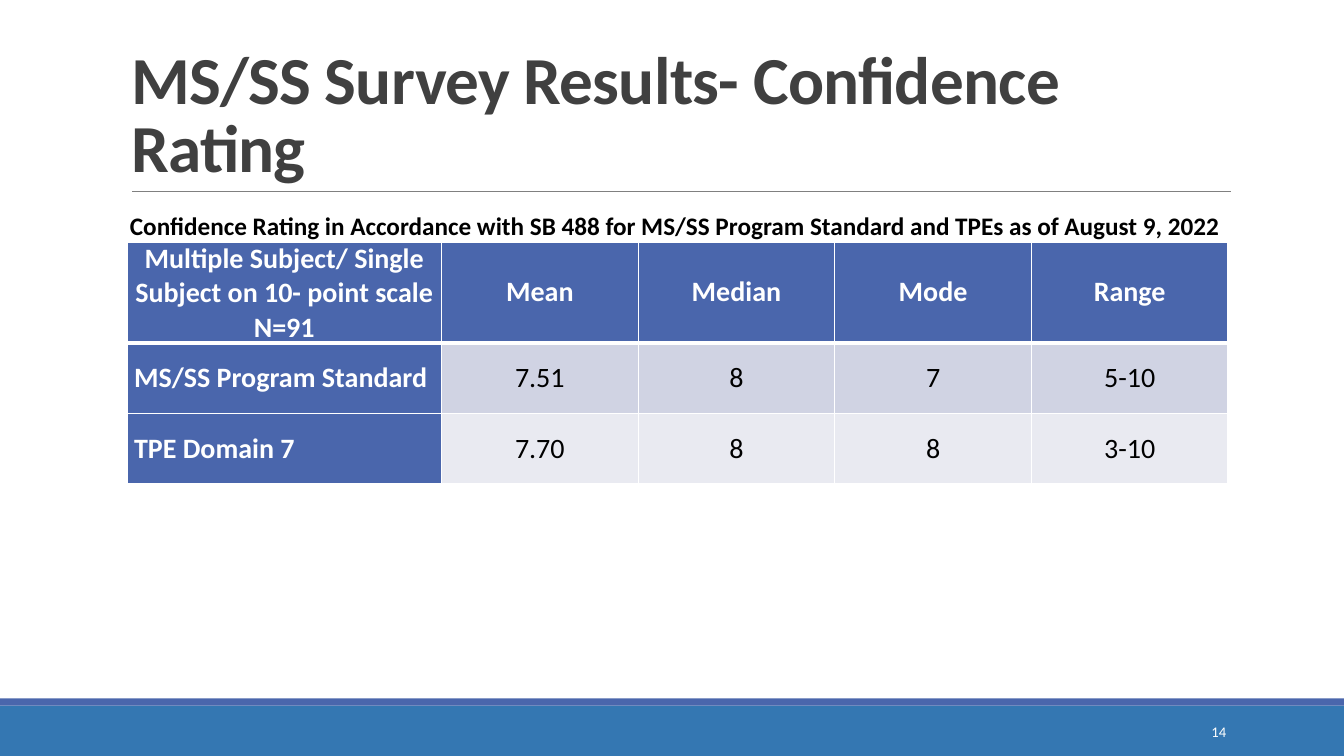
from dataclasses import dataclass

from lxml.etree import SubElement as Sub
from pptx import Presentation
from pptx.dml.color import RGBColor as Rgb
from pptx.enum.shapes import MSO_CONNECTOR as Link, MSO_SHAPE as Kind
from pptx.enum.text import MSO_ANCHOR as Anchor, MSO_AUTO_SIZE as Fit, PP_ALIGN as Align
from pptx.oxml.ns import qn
from pptx.slide import Slide
from pptx.table import _Cell as Cell
from pptx.text.text import TextFrame as Frame
from pptx.util import Inches, Pt

BLUE = Rgb(0x4A, 0x66, 0xAC)
TEAL = Rgb(0x34, 0x77, 0xB2)
WHITE = Rgb(0xFF, 0xFF, 0xFF)
BLACK = Rgb(0, 0, 0)
DARK = Rgb(0x40, 0x40, 0x40)
GRAY = Rgb(0x80, 0x80, 0x80)
BAND = Rgb(0xD0, 0xD3, 0xE3)
PALE = Rgb(0xE9, 0xEA, 0xF1)


@dataclass
class Bar:
    top: float
    high: float
    color: Rgb


@dataclass
class Row:
    high: float
    fill: Rgb
    cells: list[str]


BARS = [Bar(7, 0.5, TEAL), Bar(6.93, 0.07, BLUE)]
COLS = [3.12] + [1.95] * 4
ROWS = [
    Row(0.77, BLUE, ["Multiple Subject/ Single Subject on 10- point scale\nN=91",
                     "Mean", "Median", "Mode", "Range"]),
    Row(0.7, BAND, ["MS/SS Program Standard", "7.51", "8", "7", "5-10"]),
    Row(0.7, PALE, ["TPE Domain 7", "7.70", "8", "8", "3-10"]),
]


def write(frame: Frame, text: str, *, size: float, color: Rgb = BLACK,
          bold: bool = False, align: Align = Align.LEFT,
          anchor: Anchor = Anchor.TOP, space: float = 1, track: int = 0) -> None:
    frame.text = text
    frame.word_wrap = True
    frame.vertical_anchor = anchor
    for para in frame.paragraphs:
        para.alignment = align
        para.line_spacing = space
        for run in para.runs:
            font = run.font
            font.name, font.size, font.bold = "Calibri", Pt(size), bold
            font.color.rgb = color
            if track:
                font._element.set("spc", str(track))


def draw_bar(slide: Slide, bar: Bar) -> None:
    shape = slide.shapes.add_shape(
        Kind.RECTANGLE, 0, Inches(bar.top), Inches(13.33), Inches(bar.high))
    shape.shadow.inherit = False
    shape.fill.solid()
    shape.fill.fore_color.rgb = bar.color
    shape.line.fill.background()


def draw_rule(slide: Slide) -> None:
    rule = slide.shapes.add_connector(
        Link.STRAIGHT, Inches(1.31), Inches(1.9), Inches(12.21), Inches(1.9))
    rule.line.color.rgb = GRAY
    rule.line.width = Pt(0.5)
    Sub(rule._element.spPr, qn("a:effectLst"))


def add_box(slide: Slide, left: float, top: float, wide: float, high: float) -> Frame:
    return slide.shapes.add_textbox(
        Inches(left), Inches(top), Inches(wide), Inches(high)).text_frame


def edge(cell: Cell, side: str, width: float) -> None:
    line = Sub(cell._tc.get_or_add_tcPr(), qn(f"a:ln{side}"), w=str(Pt(width)))
    fill = Sub(line, qn("a:solidFill"))
    Sub(fill, qn("a:srgbClr"), val=str(WHITE))


def draw_cell(cell: Cell, text: str, fill: Rgb, head: bool, first: bool,
              under: bool) -> None:
    for side in "LRTB":
        thick = side == "B" and head or side == "T" and under
        edge(cell, side, 3 if thick else 1)
    cell.fill.solid()
    cell.fill.fore_color.rgb = BLUE if first else fill
    cell.margin_left = cell.margin_right = Inches(0.07)
    cell.margin_top = cell.margin_bottom = 0
    label = head or first
    write(cell.text_frame, text, size=20, bold=label,
          color=WHITE if label else BLACK,
          align=Align.LEFT if first and not head else Align.CENTER)
    cell.vertical_anchor = Anchor.MIDDLE


def draw_table(slide: Slide) -> None:
    table = slide.shapes.add_table(
        len(ROWS), len(COLS), Inches(1.26), Inches(2.4),
        Inches(sum(COLS)), Inches(sum(row.high for row in ROWS))).table
    for col, wide in zip(table.columns, COLS):
        col.width = Inches(wide)
    for r, row in enumerate(ROWS):
        table.rows[r].height = Inches(row.high)
        for c, text in enumerate(row.cells):
            draw_cell(table.cell(r, c), text, row.fill, r == 0, c == 0, r == 1)


def main() -> None:
    deck = Presentation()
    deck.slide_width, deck.slide_height = Inches(13.33), Inches(7.5)
    slide = deck.slides.add_slide(deck.slide_layouts[5])

    for bar in BARS:
        draw_bar(slide, bar)
    draw_rule(slide)

    title = slide.shapes.title
    title.left, title.top = Inches(1.2), Inches(0.31)
    title.width, title.height = Inches(11), Inches(1.59)
    title.text_frame.auto_size = Fit.NONE
    write(title.text_frame, "MS/SS Survey Results- Confidence Rating", size=48,
          color=DARK, bold=True, anchor=Anchor.BOTTOM, space=0.85, track=-50)

    write(add_box(slide, 1.19, 2.04, 11.3, 0.4),
          "Confidence Rating in Accordance with SB 488 for MS/SS Program "
          "Standard and TPEs as of August 9, 2022", size=18, bold=True)
    draw_table(slide)
    write(add_box(slide, 10.83, 7.06, 1.43, 0.4), "14", size=10.5, color=WHITE,
          align=Align.RIGHT, anchor=Anchor.MIDDLE)
    deck.save("out.pptx")


if __name__ == "__main__":
    main()
